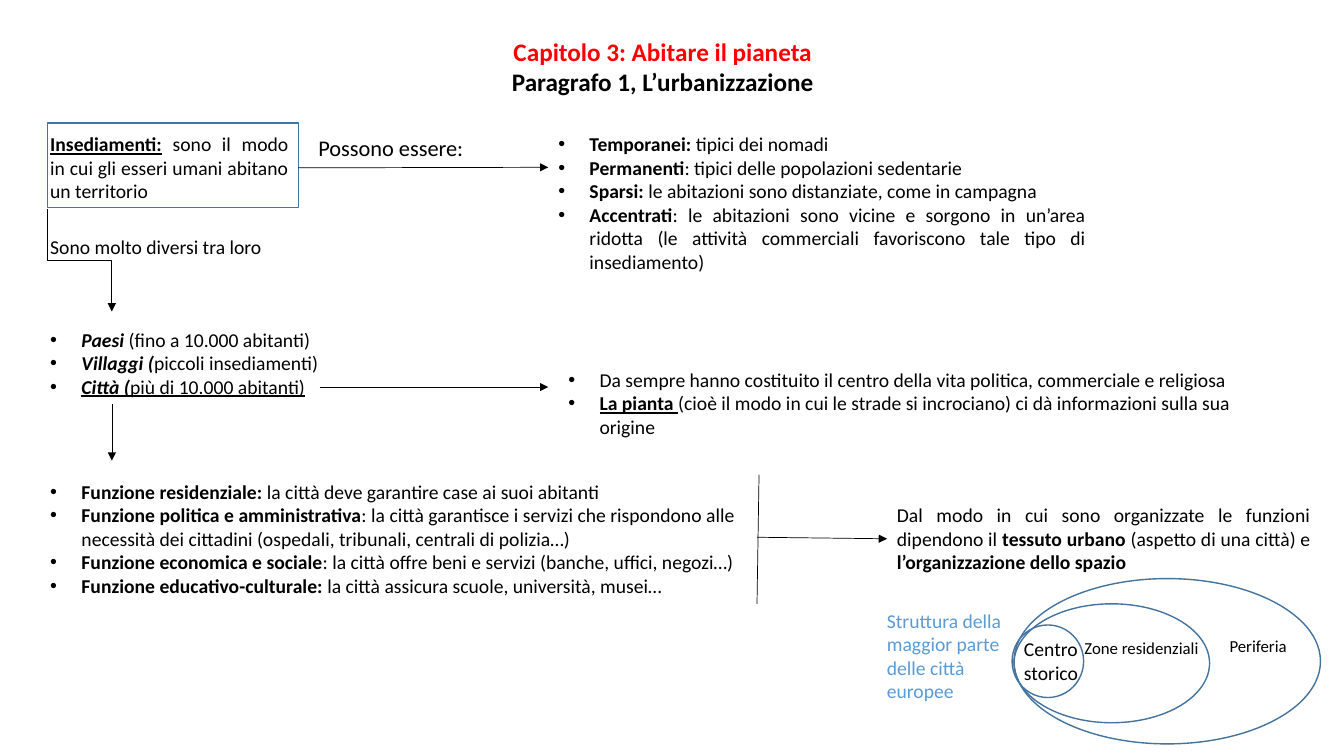
from dataclasses import dataclass

from lxml import etree
from pptx import Presentation
from pptx.dml.color import RGBColor
from pptx.enum import shapes, text
from pptx.oxml.ns import qn
from pptx.util import Emu, Inches, Pt

# Grid: square cells of a tenth of an inch
CELL = Inches(0.1)
COLS, ROWS = 133.33, 75
FONT = "Calibri"
BLACK, RED, BLUE, OUTLINE = "000000", "FF0000", "5B9BD5", "43739E"
LEFT, CENTER, JUSTIFY = text.PP_ALIGN.LEFT, text.PP_ALIGN.CENTER, text.PP_ALIGN.JUSTIFY
INDENT = Inches(0.31)


@dataclass
class Run:
    text: str
    style: str = ""  # any of b, i, u
    color: str = BLACK


@dataclass
class Block:
    col: float
    row: float
    cols: float
    rows: float
    paragraphs: list[list[Run]]
    size: int = 14
    align: text.PP_ALIGN = LEFT
    bullets: bool = False


@dataclass
class Outline:
    kind: shapes.MSO_SHAPE
    col: float
    row: float
    cols: float
    rows: float


@dataclass
class Line:
    start: tuple[float, float]
    end: tuple[float, float]
    arrow: bool = True
    from_block: str = ""  # leaves the right side of this block
    to_block: str = ""  # reaches the left side of this block
    elbow: bool = False
    rotation: int = 0


def cells(n: float) -> Emu:
    return Emu(round(n * CELL))


def rgb(value: str) -> RGBColor:
    return RGBColor.from_string(value)


def add_run(p, content: str, *, size: int, style: str = "", color: str = BLACK) -> None:
    r = p.add_run()
    r.text = content
    r.font.name, r.font.size = FONT, Pt(size)
    r.font.color.rgb = rgb(color)
    r.font.bold, r.font.italic, r.font.underline = (k in style for k in "biu")


def add_bullet(p) -> None:
    pPr = p._p.get_or_add_pPr()
    pPr.set("marL", str(INDENT))
    pPr.set("indent", str(-INDENT))
    etree.SubElement(pPr, qn("a:buFont")).set("typeface", "Arial")
    etree.SubElement(pPr, qn("a:buChar")).set("char", "•")


def add_block(slide, b: Block):
    sp = slide.shapes.add_textbox(*map(cells, (b.col, b.row, b.cols, b.rows)))
    tf = sp.text_frame
    tf.word_wrap = True
    tf.auto_size = text.MSO_AUTO_SIZE.SHAPE_TO_FIT_TEXT
    for i, runs in enumerate(b.paragraphs):
        p = tf.add_paragraph() if i else tf.paragraphs[0]
        p.alignment = b.align
        if b.bullets:
            add_bullet(p)
        for run in runs:
            add_run(p, run.text, size=b.size, style=run.style, color=run.color)
    return sp


def add_outline(slide, o: Outline) -> None:
    sp = slide.shapes.add_shape(o.kind, *map(cells, (o.col, o.row, o.cols, o.rows)))
    sp.shadow.inherit = False
    sp.fill.background()
    sp.line.color.rgb = rgb(OUTLINE)
    sp.line.width = Pt(1)


def add_line(slide, ln: Line, boxes: dict) -> None:
    kind = shapes.MSO_CONNECTOR.ELBOW if ln.elbow else shapes.MSO_CONNECTOR.STRAIGHT
    cx = slide.shapes.add_connector(kind, *map(cells, ln.start + ln.end))
    if ln.from_block:
        cx.begin_connect(boxes[ln.from_block], 3)
    if ln.to_block:
        cx.end_connect(boxes[ln.to_block], 1)
    cx.line.color.rgb = rgb(BLACK)
    cx.line.width = Pt(0.5)
    spPr = cx._element.spPr
    if ln.rotation:
        spPr.find(qn("a:xfrm")).set("rot", str(ln.rotation * 60000))
    if ln.arrow:
        etree.SubElement(cx.line._get_or_add_ln(), qn("a:tailEnd")).set("type", "triangle")
    etree.SubElement(spPr, qn("a:effectLst"))


BLOCKS = {
    "title": Block(27.3, 3.1, 76.9, 7.1, [
        [Run("Capitolo 3: Abitare il pianeta", "b", RED)],
        [Run("Paragrafo 1, L’urbanizzazione", "b")]], size=18, align=CENTER),
    "settlements": Block(4, 12.6, 25.6, 8.1, [
        [Run("Insediamenti:", "bu"), Run(" ", "b"),
         Run("sono il modo in cui gli esseri umani abitano un territorio")]], align=JUSTIFY),
    "can be": Block(30.6, 12.8, 24.9, 3.7, [[Run("Possono essere:")]], size=16),
    "kinds": Block(54.4, 12.6, 54.3, 15.1, [
        [Run("Temporanei: ", "b"), Run("tipici dei nomadi")],
        [Run("Permanenti", "b"), Run(": tipici delle popolazioni sedentarie")],
        [Run("Sparsi: ", "b"), Run("le abitazioni sono distanziate, come in campagna")],
        [Run("Accentrati", "b"),
         Run(": le abitazioni sono vicine e sorgono in un’area ridotta (le attività "
             "commerciali favoriscono tale tipo di insediamento)")]],
        align=JUSTIFY, bullets=True),
    "diversity": Block(4, 22.8, 26.2, 3.4, [[Run("Sono molto diversi tra loro")]]),
    "sizes": Block(4, 32, 30, 8.1, [
        [Run("Paesi ", "bi"), Run("(fino a 10.000 abitanti)")],
        [Run("Villaggi (", "bi"), Run("piccoli insediamenti)")],
        [Run("Città (", "biu"), Run("più di 10.000 abitanti)", "u")]], bullets=True),
    "functions": Block(4, 47.1, 69.9, 12.8, [
        [Run("Funzione residenziale: ", "b"),
         Run("la città deve garantire case ai suoi abitanti")],
        [Run("Funzione politica e amministrativa", "b"),
         Run(": la città garantisce i servizi che rispondono alle necessità dei cittadini "
             "(ospedali, tribunali, centrali di polizia…)")],
        [Run("Funzione economica e sociale", "b"),
         Run(": la città offre beni e servizi (banche, uffici, negozi…)")],
        [Run("Funzione educativo-culturale:", "b"),
         Run(" la città assicura scuole, università, musei…")]],
        align=JUSTIFY, bullets=True),
    "fabric": Block(88, 49.4, 43, 8.1, [
        [Run("Dal modo in cui sono organizzate le funzioni dipendono il "),
         Run("tessuto urbano ", "b"), Run("(aspetto di una città) e "),
         Run("l’organizzazione dello spazio", "b")]], align=JUSTIFY),
    "centre": Block(100.6, 62.7, 10.1, 5.7, [[Run("Centro storico")]]),
    "residential": Block(106.6, 62.8, 13.4, 3, [[Run("Zone residenziali")]], size=12),
    "outskirts": Block(121, 62.6, 13.3, 3, [[Run("Periferia")]], size=12),
    "structure": Block(87, 59.9, 15.6, 10.4, [
        [Run("Struttura della maggior parte delle città europee", color=BLUE)]]),
    "cities": Block(55.4, 36, 71.4, 8.1, [
        [Run("Da sempre hanno costituito il centro della vita politica, commerciale e religiosa")],
        [Run("La pianta ", "bu"),
         Run("(cioè il modo in cui le strade si incrociano) ci dà informazioni sulla sua "
             "origine")]], bullets=True),
}

OUTLINES = [
    Outline(shapes.MSO_SHAPE.RECTANGLE, 4.7, 12.2, 24.9, 8.4),
    Outline(shapes.MSO_SHAPE.OVAL, 100.4, 62, 7.1, 7.2),
    Outline(shapes.MSO_SHAPE.OVAL, 100.6, 59.9, 19.4, 11.8),
    Outline(shapes.MSO_SHAPE.OVAL, 100.6, 57.4, 30.4, 16.4),
]

LINES = [
    Line((29.6, 16.7), (54.4, 16.6), from_block="settlements"),
    Line((13, 22.6), (2.8, 29), elbow=True, rotation=270),
    Line((11.1, 40.1), (11.1, 45.7)),
    Line((75.1, 53.3), (88, 53.4), to_block="fabric"),
    Line((75.3, 47.1), (75.1, 59.9), arrow=False),
    Line((31.7, 38.4), (54.4, 38.4)),
]


def main() -> None:
    prs = Presentation()
    prs.slide_width, prs.slide_height = cells(COLS), cells(ROWS)
    slide = prs.slides.add_slide(prs.slide_layouts[6])
    # Frames and city rings, then texts, then arrows
    for outline in OUTLINES:
        add_outline(slide, outline)
    boxes = {name: add_block(slide, block) for name, block in BLOCKS.items()}
    for line in LINES:
        add_line(slide, line, boxes)
    prs.save("out.pptx")


if __name__ == "__main__":
    main()
